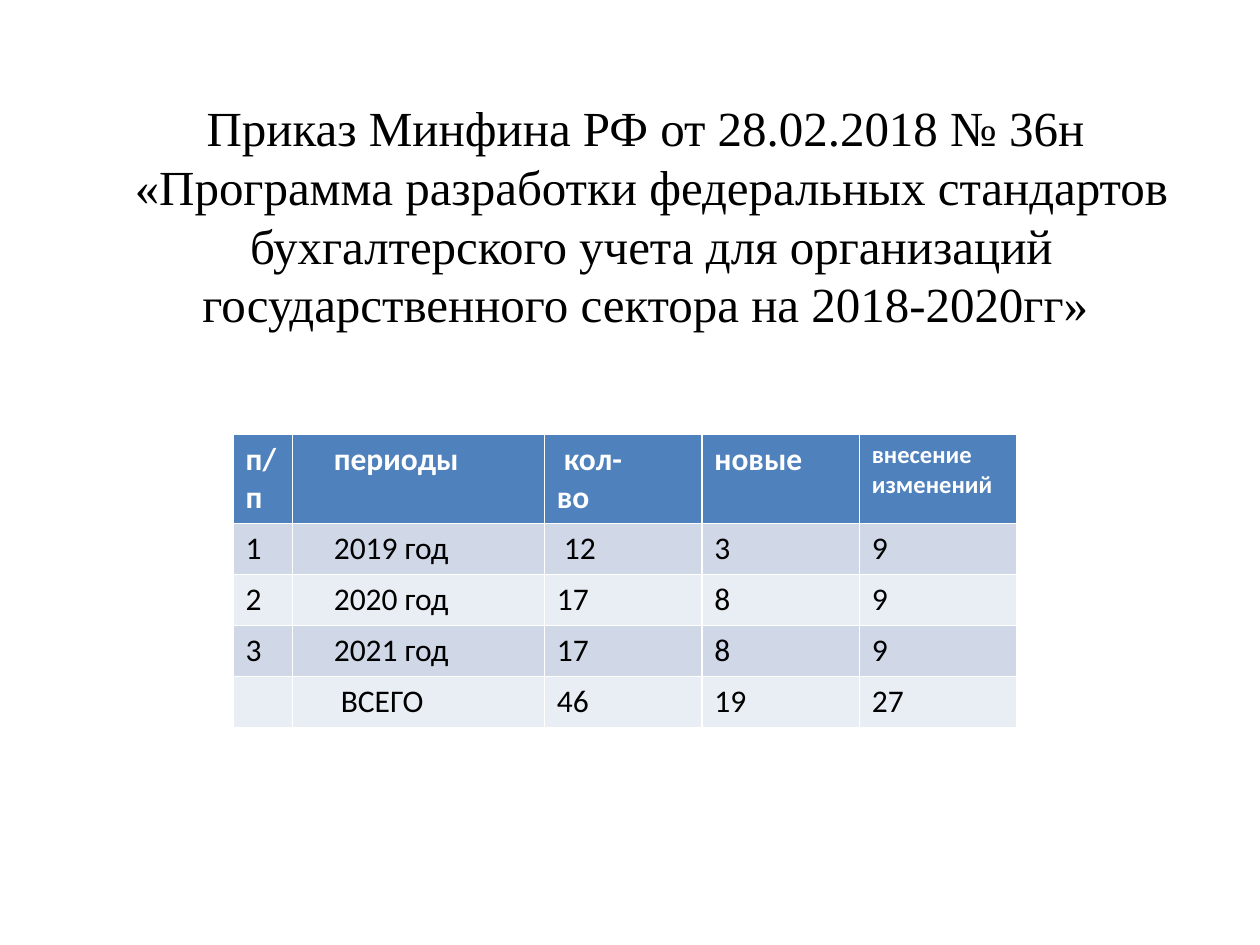
from dataclasses import dataclass

from pptx import Presentation
from pptx.dml.color import RGBColor as Color
from pptx.enum.text import MSO_ANCHOR as Anchor, PP_ALIGN as Align
from pptx.util import Inches, Pt


@dataclass(frozen=True)
class Theme:
    title_font: str = "Times New Roman"
    table_font: str = "Calibri"
    title_size: int = 28
    table_size: int = 18
    small_size: int = 14
    dark: str = "000000"
    light: str = "FFFFFF"
    header: str = "4F81BD"
    bands: tuple = ("D0D8E8", "E9EDF4")


class SlideBuilder:
    """Draws styled elements on one slide, placed by shares of its size."""

    def __init__(self, deck, theme):
        self.deck = deck
        self.theme = theme
        self.page = deck.slides.add_slide(deck.slide_layouts[5])

    def frame(self, left, top, width, height):
        across, down = self.deck.slide_width, self.deck.slide_height
        return [int(share * side) for share, side in
                zip((left, top, width, height), (across, down, across, down))]

    def span(self, para, text, font, size, color, bold=False):
        span = para.add_run()
        span.text = text
        span.font.name = font
        span.font.size = Pt(size)
        span.font.bold = bold
        span.font.color.rgb = Color.from_string(color)

    def title(self, lines, area):
        box = self.page.shapes.title
        box.left, box.top, box.width, box.height = self.frame(*area)
        box.text_frame.word_wrap = True
        box.text_frame.vertical_anchor = Anchor.MIDDLE
        para = box.text_frame.paragraphs[0]
        para.alignment = Align.CENTER
        for index, line in enumerate(lines):
            if index:
                para.add_line_break()
            self.span(para, line, self.theme.title_font,
                      self.theme.title_size, self.theme.dark)

    def cell(self, cell, text, fill, color, size, bold):
        cell.fill.solid()
        cell.fill.fore_color.rgb = Color.from_string(fill)
        frame = cell.text_frame
        for index, line in enumerate(text.split("\n")):
            para = frame.add_paragraph() if index else frame.paragraphs[0]
            para.font.size = Pt(size)
            if line:
                self.span(para, line, self.theme.table_font, size, color, bold)

    def table(self, rows, widths, area, indented, small):
        theme = self.theme
        table = self.page.shapes.add_table(
            len(rows), len(widths), *self.frame(*area)).table
        for column, width in zip(table.columns, widths):
            column.width = Inches(width)
        for r, row in enumerate(rows):
            fill = theme.bands[(r - 1) % 2] if r else theme.header
            color = theme.dark if r else theme.light
            for c, text in enumerate(row):
                size = theme.small_size if (r, c) == small else theme.table_size
                cell = table.cell(r, c)
                self.cell(cell, text, fill, color, size, bold=r == 0)
                if c == indented:
                    cell.margin_left = Inches(0.33)


def main():
    deck = Presentation()
    deck.slide_width, deck.slide_height = Inches(10), Inches(7.5)
    builder = SlideBuilder(deck, Theme())
    builder.title(
        ["Приказ Минфина РФ от 28.02.2018 № 36н ",
         "«Программа разработки федеральных стандартов бухгалтерского учета "
         "для организаций государственного сектора на 2018-2020гг» "],
        area=(0.067, 0.039, 0.9, 0.377))
    builder.table(
        [["п/п", "периоды", " кол-\nво", "новые", "внесение изменений"],
         ["1", "2019 год", " 12", "3", "9"],
         ["2", "2020 год", "17", "8", "9"],
         ["3", "2021 год", "17", "8", "9"],
         ["", " ВСЕГО", "46", "19", "27"]],
        widths=[0.47, 2, 1.25, 1.25, 1.25],
        area=(0.185, 0.459, 0.622, 0.27),
        indented=1, small=(0, 4))
    deck.save("out.pptx")


if __name__ == "__main__":
    main()
